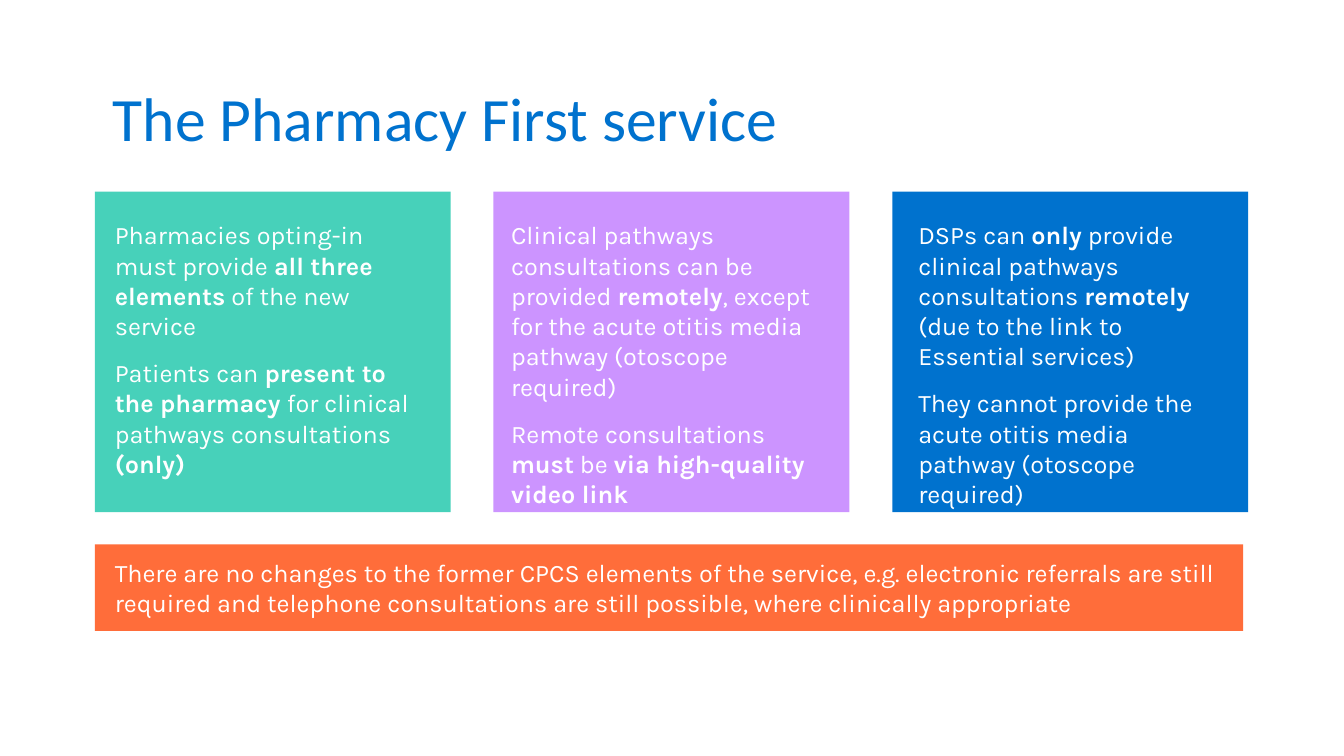
from pptx import Presentation
from pptx.dml.color import RGBColor
from pptx.enum.shapes import MSO_SHAPE
from pptx.enum.text import MSO_ANCHOR, PP_ALIGN
from pptx.util import Inches, Pt

COLOURS = {
    "teal": "47D1BA",
    "purple": "CC94FF",
    "blue": "0072CE",
    "orange": "FF6D3A",
    "white": "FFFFFF",
}

PANEL_LEFT, PANEL_TOP = 0.94, 1.9
PANEL_WIDTH, PANEL_HEIGHT = 3.53, 3.18
PANEL_STEP = 3.955

# Panel colour, text left, text width, text height, paragraphs (** marks bold)
PANELS = [
    ("teal", 1.04, 3.29, 2.73, [
        "Pharmacies opting-in must provide **all three elements** of the new service",
        "Patients can **present to the pharmacy **for clinical pathways "
        "consultations **(only)**",
    ]),
    ("purple", 4.97, 3.32, 3, [
        "Clinical pathways consultations can be provided **remotely**, except for "
        "the acute otitis media pathway (otoscope required)",
        "Remote consultations **must** be **via high-quality video link**",
    ]),
    ("blue", 9.01, 3.28, 3, [
        "DSPs can **only** provide clinical pathways consultations **remotely** "
        "(due to the link to Essential services)",
        "They cannot provide the acute otitis media pathway (otoscope required)",
    ]),
]

FOOTNOTE = (
    "There are no changes to the former CPCS elements of the service, e.g. "
    "electronic referrals are still required and telephone consultations are "
    "still possible, where clinically appropriate"
)


def colour(name):
    return RGBColor.from_string(COLOURS[name])


def place(shape, left, top, width, height):
    shape.left, shape.top = Inches(left), Inches(top)
    shape.width, shape.height = Inches(width), Inches(height)


def add_title(page, text):
    title = page.shapes.title
    place(title, 1.02, 0.4, 11.39, 1.45)
    frame = title.text_frame
    frame.text = text
    frame.vertical_anchor = MSO_ANCHOR.MIDDLE
    para = frame.paragraphs[0]
    para.alignment = PP_ALIGN.LEFT
    para.line_spacing = 1.1
    font = para.runs[0].font
    font.name, font.size = "Calibri", Pt(44)
    font.color.rgb = colour("blue")


def add_panel(page, fill, left, top, width, height):
    panel = page.shapes.add_shape(
        MSO_SHAPE.RECTANGLE, Inches(left), Inches(top), Inches(width), Inches(height))
    panel.shadow.inherit = False
    panel.fill.solid()
    panel.fill.fore_color.rgb = colour(fill)
    panel.line.fill.background()


def add_text(page, paragraphs, left, top, width, height):
    box = page.shapes.add_textbox(
        Inches(left), Inches(top), Inches(width), Inches(height))
    frame = box.text_frame
    frame.word_wrap = True
    for index, text in enumerate(paragraphs):
        para = frame.add_paragraph() if index else frame.paragraphs[0]
        if index:
            para.space_before = Pt(12)
        # Every second piece between the marks is bold
        for number, piece in enumerate(text.split("**")):
            if piece:
                span = para.add_run()
                span.text = piece
                span.font.name, span.font.size = "Karla", Pt(18)
                span.font.bold = number % 2 == 1
                span.font.color.rgb = colour("white")


def main():
    deck = Presentation()
    deck.slide_width, deck.slide_height = Inches(13.33), Inches(7.5)
    page = deck.slides.add_slide(deck.slide_layouts.get_by_name("Title Only"))

    add_title(page, "The Pharmacy First service")

    # Three panels in a row
    for index, (fill, left, width, height, paragraphs) in enumerate(PANELS):
        add_panel(page, fill, PANEL_LEFT + index * PANEL_STEP, PANEL_TOP,
                  PANEL_WIDTH, PANEL_HEIGHT)
        add_text(page, paragraphs, left, 2.13, width, height)

    # Band below the panels
    add_panel(page, "orange", PANEL_LEFT, 5.4, 11.39, 0.86)
    add_text(page, [FOOTNOTE], 1.04, 5.48, 11.2, 0.71)

    deck.save("out.pptx")


if __name__ == "__main__":
    main()
